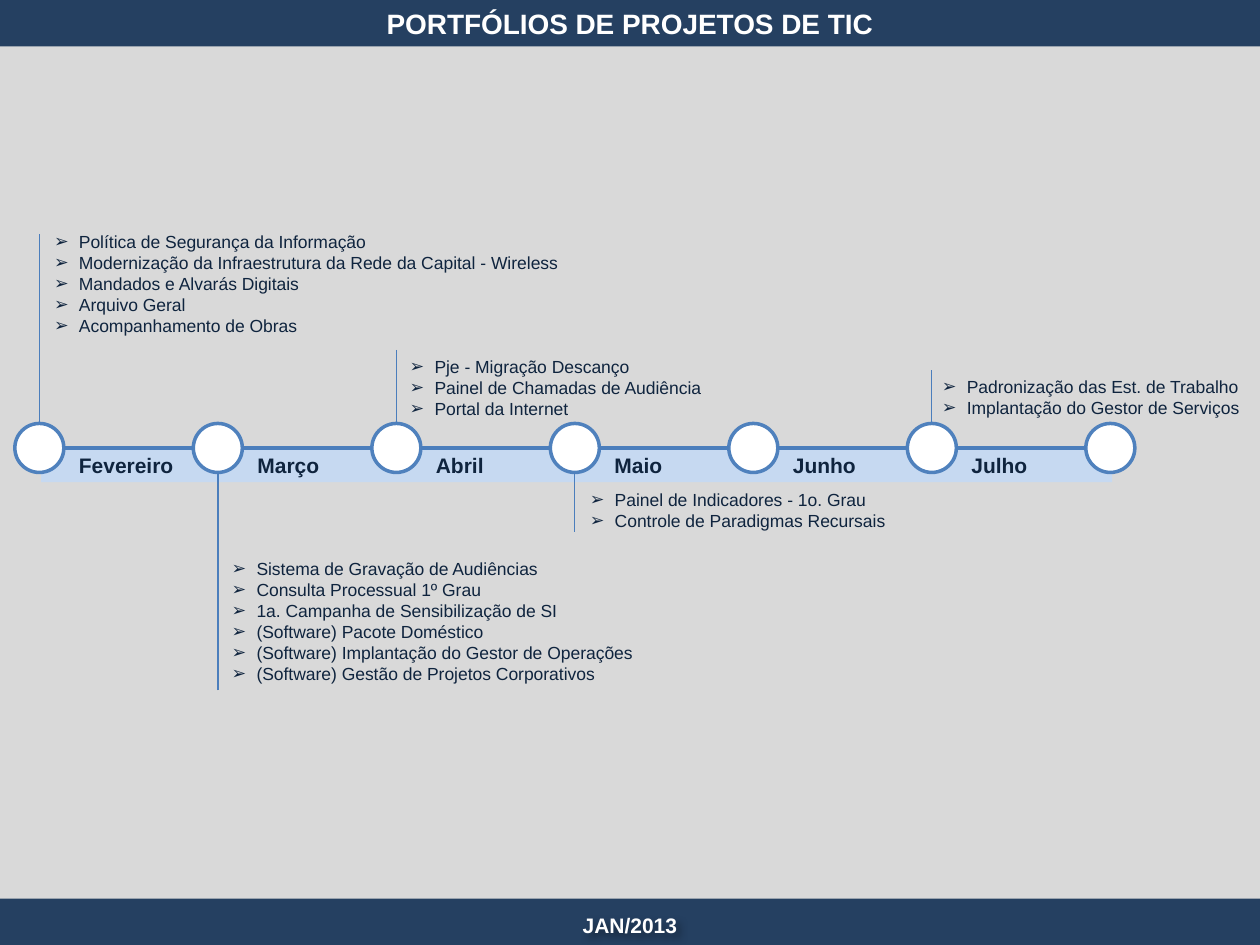
from lxml import etree
from pptx import Presentation
from pptx.dml.color import RGBColor
from pptx.enum.shapes import MSO_CONNECTOR as Connector, MSO_SHAPE as Shape
from pptx.enum.text import MSO_ANCHOR as Anchor, PP_ALIGN as Align
from pptx.oxml import parse_xml
from pptx.oxml.ns import nsdecls, qn
from pptx.util import Pt

COLORS = {
    "panel": "D9D9D9", "band": "254061", "strip": "C6D9F1", "white": "FFFFFF",
    "ring": "4F81BD", "line": "4B7EBC", "text": "0F243E",
}
FONT = "Arial"
WIDTH, HEIGHT = 720, 540
BAND_HEIGHT = 26.5

# Timeline geometry
FIRST_X, STEP, AXIS_Y, RADIUS = 22.5, 102, 256, 14
MONTHS = ["Fevereiro", "Março", "Abril", "Maio", "Junho", "Julho"]

# Month index, far end of the stem, list (left, top, width, height), projects
PROJECTS = [
    (0, 134, (23.8, 128.3, 334, 72), [
        "Política de Segurança da Informação",
        "Modernização da Infraestrutura da Rede da Capital - Wireless",
        "Mandados e Alvarás Digitais",
        "Arquivo Geral",
        "Acompanhamento de Obras",
    ]),
    (1, 394.5, (125.3, 315.3, 334, 79), [
        "Sistema de Gravação de Audiências",
        "Consulta Processual 1º Grau",
        "1a. Campanha de Sensibilização de SI",
        "(Software) Pacote Doméstico",
        "(Software) Implantação do Gestor de Operações",
        "(Software) Gestão de Projetos Corporativos",
    ]),
    (2, 200, (227, 200, 212, 36), [
        "Pje - Migração Descanço",
        "Painel de Chamadas de Audiência",
        "Portal da Internet",
    ]),
    (3, 304, (330, 276, 236, 36), [
        "Painel de Indicadores - 1o. Grau",
        "Controle de Paradigmas Recursais",
    ]),
    (5, 211.5, (531.2, 211.5, 188.8, 36), [
        "Padronização das Est. de Trabalho",
        "Implantação do Gestor de Serviços",
    ]),
]


def color(name):
    return RGBColor.from_string(COLORS[name])


def node_x(index):
    return FIRST_X + index * STEP


def add_span(para, text, size, color_name, bold=False):
    span = para.add_run()
    span.text = text
    font = span.font
    font.name, font.size, font.bold = FONT, Pt(size), bold
    font.color.rgb = color(color_name)


def add_block(page, kind, left, top, width, height, fill, line=None):
    block = page.shapes.add_shape(kind, Pt(left), Pt(top), Pt(width), Pt(height))
    block.shadow.inherit = False
    block.fill.solid()
    block.fill.fore_color.rgb = color(fill)
    if line:
        block.line.color.rgb = color(line)
        block.line.width = Pt(2)
    else:
        block.line.fill.background()
    return block


def add_line(page, start, end, width):
    line = page.shapes.add_connector(
        Connector.STRAIGHT, *(Pt(value) for value in (*start, *end)))
    line.line.color.rgb = color("line")
    line.line.width = Pt(width)
    etree.SubElement(line._element.spPr, qn("a:effectLst"))
    return line


def add_box(page, left, top, width, height, anchor=Anchor.TOP):
    box = page.shapes.add_textbox(Pt(left), Pt(top), Pt(width), Pt(height))
    box.text_frame.word_wrap = True
    box.text_frame.vertical_anchor = anchor
    return box


def add_label(page, text, left, top, width, height, color_name, align=Align.LEFT):
    box = add_box(page, left, top, width, height, Anchor.MIDDLE)
    para = box.text_frame.paragraphs[0]
    para.alignment = align
    add_span(para, text, 12, color_name, bold=True)
    return box


def add_list(page, area, items):
    frame = add_box(page, *area).text_frame
    for number, item in enumerate(items):
        para = frame.add_paragraph() if number else frame.paragraphs[0]
        props = para._p.get_or_add_pPr()
        props.set("marL", str(Pt(14.2)))
        props.set("indent", str(-Pt(14.2)))
        etree.SubElement(props, qn("a:buFont")).set("typeface", FONT)
        etree.SubElement(props, qn("a:buChar")).set("char", "➢")
        add_span(para, item, 10, "text")


def add_title(page, text):
    title = page.shapes.title
    title.left, title.top = Pt(0), Pt(0)
    title.width, title.height = Pt(WIDTH), Pt(BAND_HEIGHT)
    title.fill.solid()
    title.fill.fore_color.rgb = color("band")
    title.text_frame.vertical_anchor = Anchor.MIDDLE
    para = title.text_frame.paragraphs[0]
    para.alignment = Align.CENTER
    add_span(para, text, 16, "white", bold=True)


def add_footer(page, text):
    top = HEIGHT - BAND_HEIGHT
    add_block(page, Shape.RECTANGLE, 0, top, WIDTH, BAND_HEIGHT, "band")
    label = add_label(page, text, 0, top + 1, WIDTH, 28, "white", Align.CENTER)
    # Soft shadow behind the date
    label._element.spPr.append(parse_xml(
        f'<a:effectLst {nsdecls("a")}><a:outerShdw blurRad="{Pt(4)}" '
        f'dist="{Pt(3)}" dir="2700000"><a:srgbClr val="000000">'
        '<a:alpha val="40000"/></a:srgbClr></a:outerShdw></a:effectLst>'))


def add_timeline(page):
    add_block(page, Shape.RECTANGLE, 23.5, AXIS_Y, 6 * STEP, 19.5, "strip")
    nodes = [
        add_block(page, Shape.OVAL, node_x(index) - RADIUS, AXIS_Y - RADIUS,
                  2 * RADIUS, 2 * RADIUS, "white", "ring")
        for index in range(len(MONTHS) + 1)
    ]
    for index, month in enumerate(MONTHS):
        left = node_x(index) + RADIUS
        add_line(page, (left, AXIS_Y), (node_x(index + 1) - RADIUS, AXIS_Y), 2.25)
        add_label(page, month, left + 1.5, AXIS_Y, 73, 19.5, "text")
    return nodes


def add_projects(page, nodes):
    for index, far_y, area, items in PROJECTS:
        above = far_y < AXIS_Y
        near_y = AXIS_Y - RADIUS if above else AXIS_Y + RADIUS
        stem = add_line(page, (node_x(index), far_y), (node_x(index), near_y), 0.75)
        if above:
            stem.end_connect(nodes[index], 0)
        add_list(page, area, items)


def main():
    deck = Presentation()
    deck.slide_width, deck.slide_height = Pt(WIDTH), Pt(HEIGHT)
    page = deck.slides.add_slide(deck.slide_layouts[5])
    page.background.fill.solid()
    page.background.fill.fore_color.rgb = color("panel")

    # Header and footer bands
    add_title(page, "PORTFÓLIOS DE PROJETOS DE TIC")
    add_footer(page, "JAN/2013")

    # Months and their projects
    nodes = add_timeline(page)
    add_projects(page, nodes)
    deck.save("out.pptx")


if __name__ == "__main__":
    main()
